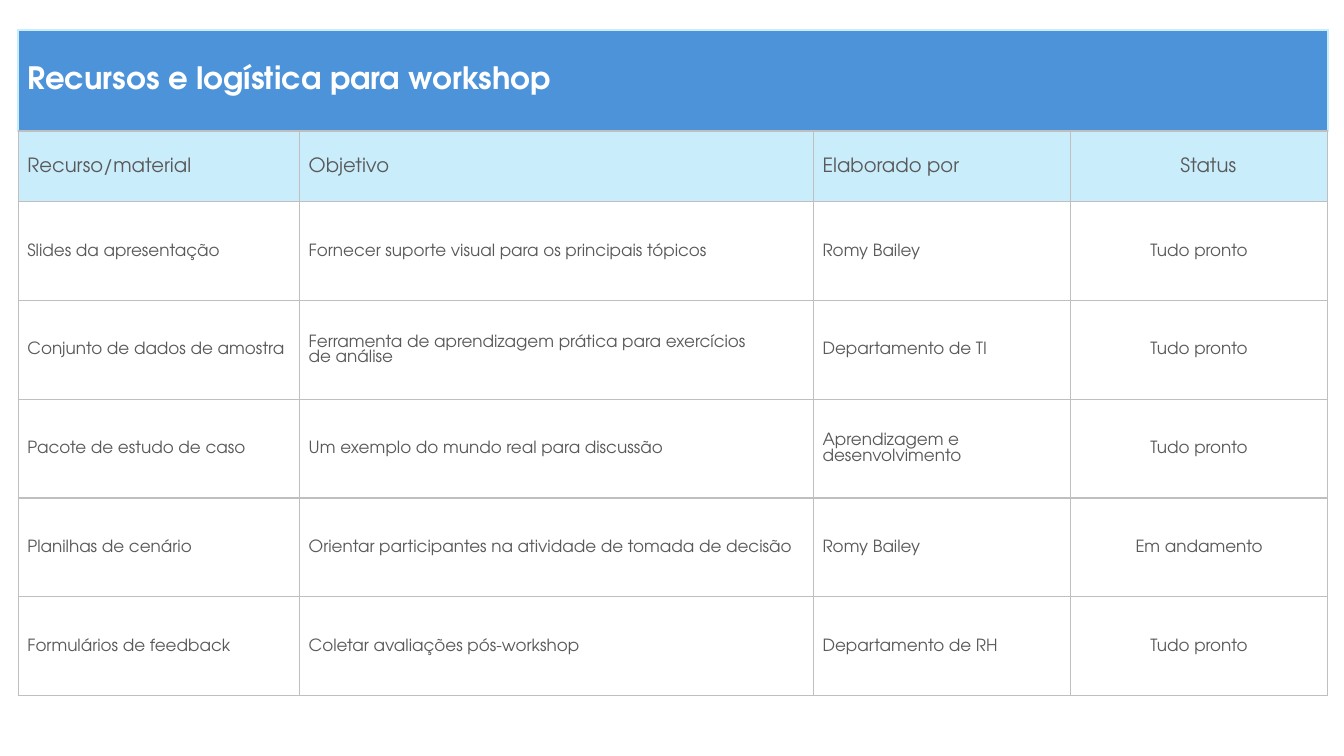
from dataclasses import dataclass

from lxml.etree import SubElement
from pptx import Presentation
from pptx.dml.color import RGBColor
from pptx.enum.text import MSO_ANCHOR, PP_ALIGN
from pptx.oxml.ns import qn
from pptx.table import _Cell
from pptx.util import Cm, Pt

FONT = "TeX Gyre Adventor"
BLUE = RGBColor(0x4D, 0x93, 0xD9)
PALE_BLUE = RGBColor(0xCA, 0xED, 0xFB)
WHITE = RGBColor(0xFF, 0xFF, 0xFF)
TEXT_GREY = RGBColor(0x59, 0x59, 0x59)
LINE_GREY = RGBColor(0xBF, 0xBF, 0xBF)


@dataclass(frozen=True)
class CellStyle:
    size: int
    color: RGBColor
    fill: RGBColor | None = None
    bold: bool = False


@dataclass(frozen=True)
class Border:
    color: RGBColor
    width: float


TITLE = CellStyle(22, WHITE, BLUE, bold=True)
HEADER = CellStyle(14, TEXT_GREY, PALE_BLUE)
BODY = CellStyle(12, TEXT_GREY)
GRID = Border(LINE_GREY, 1)
TITLE_EDGE = Border(PALE_BLUE, 1.5)

COLUMN_WIDTHS = (7.09, 12.95, 6.48, 6.48)
ROW_HEIGHTS = (2.54, 1.78) + (2.49,) * 5
STATUS_COLUMN = len(COLUMN_WIDTHS) - 1

HEADINGS = ("Recurso/material", "Objetivo", "Elaborado por", "Status")
RESOURCES = (
    ("Slides da apresentação", "Fornecer suporte visual para os principais tópicos",
     "Romy Bailey", "Tudo pronto"),
    ("Conjunto de dados de amostra",
     "Ferramenta de aprendizagem prática para exercícios \nde análise",
     "Departamento de TI", "Tudo pronto"),
    ("Pacote de estudo de caso", "Um exemplo do mundo real para discussão",
     "Aprendizagem e desenvolvimento", "Tudo pronto"),
    ("Planilhas de cenário", "Orientar participantes na atividade de tomada de decisão",
     "Romy Bailey", "Em andamento"),
    ("Formulários de feedback", "Coletar avaliações pós-workshop",
     "Departamento de RH", "Tudo pronto"),
)


def set_borders(cell: _Cell, edge: Border, bottom: Border) -> None:
    properties = cell._tc.get_or_add_tcPr()
    for side, border in (("L", edge), ("R", edge), ("T", edge), ("B", bottom)):
        line = SubElement(properties, qn(f"a:ln{side}"), w=str(Pt(border.width)))
        solid = SubElement(line, qn("a:solidFill"))
        SubElement(solid, qn("a:srgbClr"), val=str(border.color))


def paint_cell(cell: _Cell, style: CellStyle) -> None:
    set_borders(cell, TITLE_EDGE if style is TITLE else GRID, GRID)
    if style.fill is None:
        cell.fill.background()
    else:
        cell.fill.solid()
        cell.fill.fore_color.rgb = style.fill


def write_cell(cell: _Cell, text: str, style: CellStyle, left: float,
               align: PP_ALIGN) -> None:
    cell.vertical_anchor = MSO_ANCHOR.MIDDLE
    cell.margin_left = Cm(left)
    cell.margin_top = cell.margin_right = Cm(0.02)
    cell.margin_bottom = 0
    para = cell.text_frame.paragraphs[0]
    para.text = text
    para.alignment = align
    para.font.name = FONT
    para.font.size = Pt(style.size)
    para.font.bold = style.bold
    para.font.color.rgb = style.color


def main() -> None:
    deck = Presentation()
    deck.slide_width, deck.slide_height = Cm(33.87), Cm(19.05)
    page = deck.slides.add_slide(deck.slide_layouts[6])

    # Table grid
    table = page.shapes.add_table(
        len(ROW_HEIGHTS), len(COLUMN_WIDTHS), Cm(0.46), Cm(0.76),
        Cm(sum(COLUMN_WIDTHS)), Cm(sum(ROW_HEIGHTS))).table
    table.first_row = table.horz_banding = False
    for column, width in zip(table.columns, COLUMN_WIDTHS):
        column.width = Cm(width)
    for row, height in zip(table.rows, ROW_HEIGHTS):
        row.height = Cm(height)

    # Title band
    for cell in table.rows[0].cells:
        paint_cell(cell, TITLE)
    title = table.cell(0, 0)
    title.merge(table.cell(0, STATUS_COLUMN))
    write_cell(title, "Recursos e logística para workshop", TITLE, 0.23, PP_ALIGN.LEFT)

    # Headings and resources
    for r, texts in enumerate((HEADINGS, *RESOURCES), start=1):
        style = HEADER if r == 1 else BODY
        for c, text in enumerate(texts):
            cell = table.cell(r, c)
            paint_cell(cell, style)
            if c == STATUS_COLUMN:
                left = 0.48 if style is HEADER else 0.02
                write_cell(cell, text, style, left, PP_ALIGN.CENTER)
            else:
                write_cell(cell, text, style, 0.23, PP_ALIGN.LEFT)

    deck.save("out.pptx")


if __name__ == "__main__":
    main()
